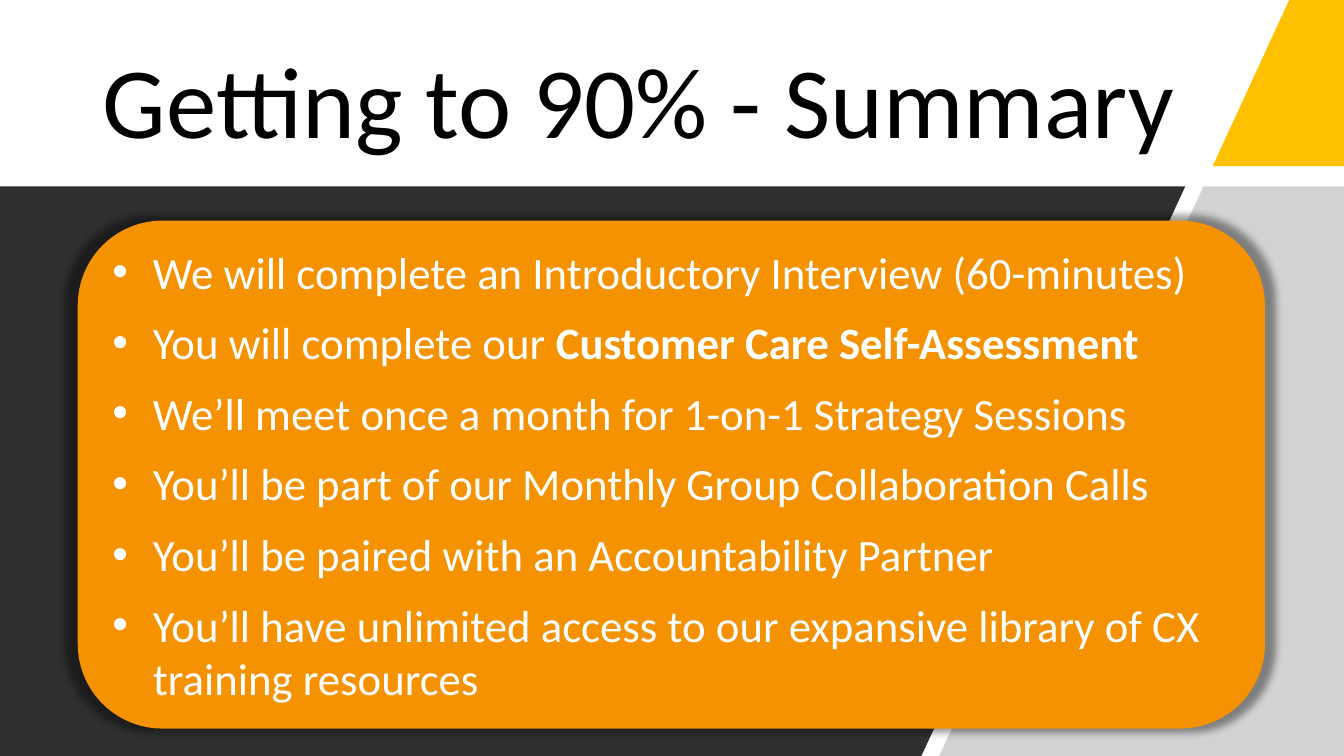
from lxml import etree
from pptx import Presentation
from pptx.dml.color import RGBColor
from pptx.enum.shapes import MSO_SHAPE as Shape
from pptx.enum.text import MSO_ANCHOR as Anchor, MSO_AUTO_SIZE as AutoSize, PP_ALIGN as Align
from pptx.oxml import parse_xml
from pptx.oxml.ns import nsdecls, qn
from pptx.util import Cm, Pt

BLACK = RGBColor(0x00, 0x00, 0x00)
WHITE = RGBColor(0xFF, 0xFF, 0xFF)
YELLOW = RGBColor(0xFF, 0xC0, 0x00)
GREY = RGBColor(0xA6, 0xA6, 0xA6)
CHARCOAL = RGBColor(0x30, 0x30, 0x30)
ORANGE = RGBColor(0xF4, 0x92, 0x02)

WIDTH, HEIGHT = 33.87, 19.05
BAND_TOP = 4.7

# Each step is a list of (text, bold) runs
STEPS = [
    [("We will complete an Introductory Interview (60-minutes)", False)],
    [("You will complete our ", False), ("Customer Care Self-Assessment", True)],
    [("We’ll meet once a month for 1-on-1 Strategy Sessions", False)],
    [("You’ll be part of our Monthly Group Collaboration Calls", False)],
    [("You’ll be paired with an Accountability Partner", False)],
    [("You’ll have unlimited access to our expansive library of CX training resources", False)],
]


def add_run(paragraph, text, *, size, color, font="Calibri", bold=False):
    run = paragraph.add_run()
    run.text = text
    run.font.name = font
    run.font.size = Pt(size)
    run.font.bold = bold
    run.font.color.rgb = color


class SummarySlide:
    def __init__(self, deck, title_size=72, body_size=32):
        self.slide = deck.slides.add_slide(deck.slide_layouts[5])
        self.title_size = title_size
        self.body_size = body_size

    def paint(self, shape, color):
        shape.shadow.inherit = False
        shape.fill.solid()
        shape.fill.fore_color.rgb = color
        shape.line.fill.background()

    def title(self, text, left, top, width, height):
        heading = self.slide.shapes.title
        heading.left, heading.top = Cm(left), Cm(top)
        heading.width, heading.height = Cm(width), Cm(height)
        frame = heading.text_frame
        frame.word_wrap = True
        frame.auto_size = AutoSize.NONE
        frame.vertical_anchor = Anchor.MIDDLE
        line = frame.paragraphs[0]
        line.alignment = Align.LEFT
        line.line_spacing = 0.9
        add_run(line, text, size=self.title_size, color=BLACK)

    def panel(self, corners, color, alpha=None):
        start, *others = [(Cm(x), Cm(y)) for x, y in corners]
        builder = self.slide.shapes.build_freeform(*start)
        builder.add_line_segments(others, close=True)
        panel = builder.convert_to_shape()
        self.paint(panel, color)
        if alpha is not None:
            tint = panel.fill._xPr.find(".//" + qn("a:srgbClr"))
            etree.SubElement(tint, qn("a:alpha"), val=str(alpha * 1000))

    def bullet_card(self, steps, left, top, width, height):
        card = self.slide.shapes.add_shape(
            Shape.ROUNDED_RECTANGLE, Cm(left), Cm(top), Cm(width), Cm(height))
        self.paint(card, ORANGE)
        self.glow(card)
        frame = card.text_frame
        frame.word_wrap = True
        frame.vertical_anchor = Anchor.MIDDLE
        for index, runs in enumerate(steps):
            step = frame.add_paragraph() if index else frame.paragraphs[0]
            step.alignment = Align.LEFT
            step.space_before = step.space_after = Pt(6)
            self.bullet(step)
            for text, bold in runs:
                add_run(step, text, size=self.body_size, color=WHITE, bold=bold)

    def bullet(self, paragraph, indent=1.02):
        props = paragraph._p.get_or_add_pPr()
        props.set("marL", str(Cm(indent)))
        props.set("indent", str(-Cm(indent)))
        etree.SubElement(props, qn("a:buFont"), typeface="Arial")
        etree.SubElement(props, qn("a:buChar"), char="•")

    def glow(self, shape):
        effects = shape._element.spPr.find(qn("a:effectLst"))
        effects.append(parse_xml(
            f'<a:outerShdw {nsdecls("a")} blurRad="{Pt(5)}" sx="102000" sy="102000" '
            'algn="ctr" rotWithShape="0"><a:srgbClr val="000000">'
            '<a:alpha val="40000"/></a:srgbClr></a:outerShdw>'))


def main():
    deck = Presentation()
    deck.slide_width, deck.slide_height = Cm(WIDTH), Cm(HEIGHT)
    summary = SummarySlide(deck)

    # Heading
    summary.title("Getting to 90% - Summary", 2.34, 1.02, 27.53, 3.3)

    # Slanted background panels
    summary.panel([(32.49, 0), (WIDTH, 0), (WIDTH, 4.19), (30.56, 4.19)], YELLOW)
    summary.panel([(30.33, BAND_TOP), (WIDTH, BAND_TOP), (WIDTH, HEIGHT), (23.67, HEIGHT)],
                  GREY, alpha=50)
    summary.panel([(0, BAND_TOP), (29.87, BAND_TOP), (23.22, HEIGHT), (0, HEIGHT)], CHARCOAL)

    # Programme steps
    summary.bullet_card(STEPS, 1.96, 5.56, 29.92, 12.8)

    deck.save("out.pptx")


if __name__ == "__main__":
    main()
